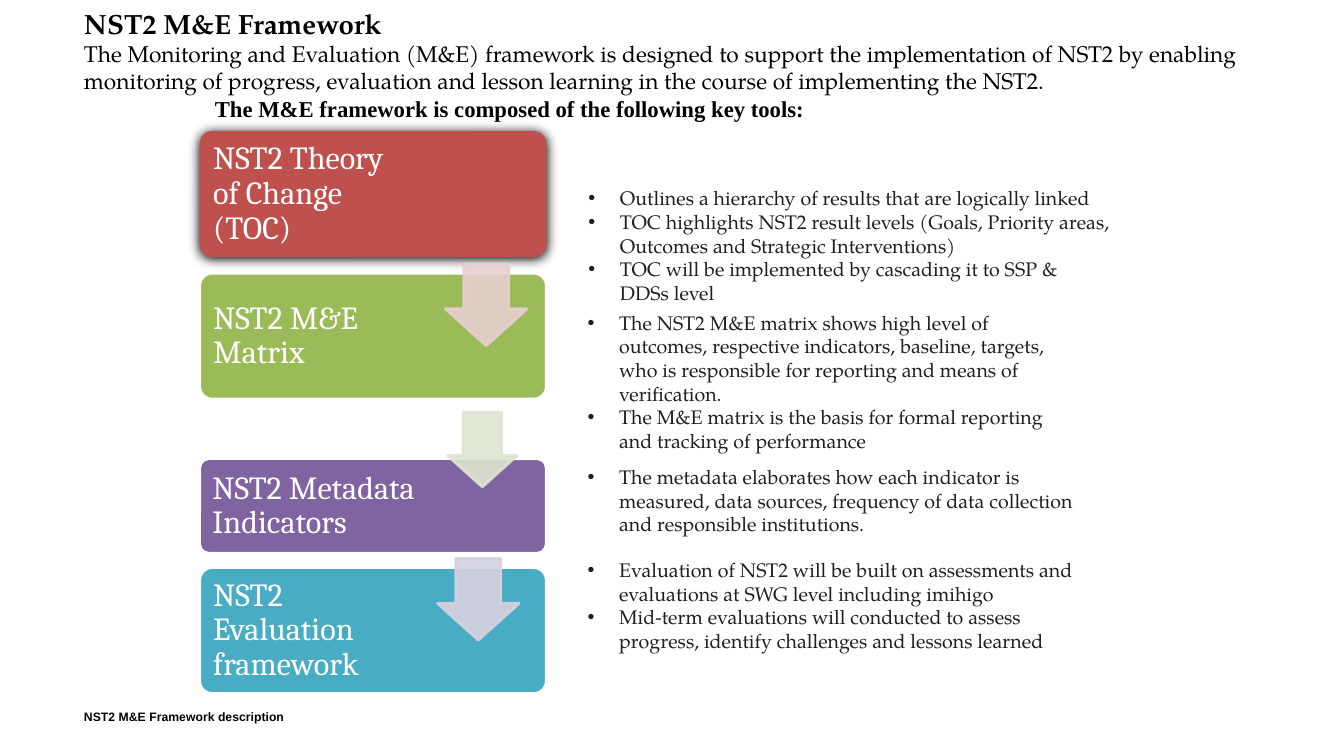
from lxml import etree
from pptx import Presentation
from pptx.dml.color import RGBColor
from pptx.enum.shapes import MSO_SHAPE
from pptx.enum.text import MSO_ANCHOR, PP_ALIGN
from pptx.oxml.ns import qn
from pptx.util import Pt

ROUNDED, DOWN_ARROW = MSO_SHAPE.ROUNDED_RECTANGLE, MSO_SHAPE.DOWN_ARROW
MIDDLE, LEFT = MSO_ANCHOR.MIDDLE, PP_ALIGN.LEFT

COLORS = {
    "black": "000000", "white": "FFFFFF", "body": "1F1F1F",
    "red": "BF504D", "green": "9BBB59", "purple": "8064A2", "teal": "49ACC5",
    "pale_red": "E7CFCF", "pale_green": "DDE5D0", "pale_purple": "D7D1DF",
}
SERIF = "TeX Gyre Pagella"

# text, size, font, bold, left indent
HEADING = [
    ("NST2 M&E Framework", 19.8, SERIF, True, 0),
    ("The Monitoring and Evaluation (M&E) framework is designed to support the "
     "implementation of NST2 by enabling monitoring of progress, evaluation and "
     "lesson learning in the course of implementing the NST2.", 16.2, SERIF, False, 0),
    ("The M&E framework is composed of the following key tools:",
     16.2, "Times New Roman", True, 93.5),
]
FOOTER = "NST2 M&E Framework description"

# text, fill, top, height, right inset
CARDS = [
    ("NST2 Theory of Change (TOC)", "red", 93.6, 90, 107),
    ("NST2 M&E Matrix", "green", 195.1, 90, 87),
    ("NST2 Metadata Indicators", "purple", 327.6, 67.7, 87),
    ("NST2 Evaluation framework", "teal", 405.4, 90, 87),
]
CARD_LEFT, CARD_WIDTH = 142.6, 247.7

# colour, left, top, width, height
ARROWS = [
    ("pale_red", 318.2, 188.6, 58.3, 58.3),
    ("pale_green", 319.7, 294.5, 49.7, 53.3),
    ("pale_purple", 312.5, 398.9, 58.3, 58.3),
]

# left, top, width, height, bullets
DETAILS = [
    (413.3, 129.6, 388, 92, [
        "Outlines a hierarchy of results that are logically linked",
        "TOC highlights NST2 result levels (Goals, Priority areas, Outcomes and "
        "Strategic Interventions)",
        "TOC will be implemented by cascading it to SSP & DDSs level"]),
    (412.6, 218.5, 365.8, 109, [
        "The NST2 M&E matrix shows high level of outcomes, respective indicators, "
        "baseline, targets, who is responsible for reporting and means of verification.",
        "The M&E matrix is the basis for formal reporting and tracking of performance"]),
    (412.6, 328.6, 365.8, 58, [
        "The metadata elaborates how each indicator is measured, data sources, "
        "frequency of data collection and responsible institutions."]),
    (412.6, 395.3, 365.8, 75, [
        "Evaluation of NST2 will be built on assessments and evaluations at SWG "
        "level including imihigo",
        "Mid-term evaluations will conducted to assess progress, identify "
        "challenges and lessons learned"]),
]
BULLET_INDENT = 22.5


def rgb(name):
    return RGBColor.from_string(COLORS[name])


def style(p, size, font, color, bold=False):
    for r in p.runs:
        r.font.size, r.font.name, r.font.bold = Pt(size), font, bold
        r.font.color.rgb = rgb(color)


def add_text(s, left, top, width, height):
    tf = s.shapes.add_textbox(Pt(left), Pt(top), Pt(width), Pt(height)).text_frame
    tf.word_wrap = True
    return tf


def add_paragraphs(tf, texts):
    """Write one paragraph per text and return the paragraphs."""
    tf.text = "\n".join(texts)
    return tf.paragraphs


def add_shape(s, kind, left, top, width, height, fill, line):
    sp = s.shapes.add_shape(kind, Pt(left), Pt(top), Pt(width), Pt(height))
    sp.shadow.inherit = False
    sp.fill.solid()
    sp.fill.fore_color.rgb = rgb(fill)
    sp.line.color.rgb = rgb(line)
    sp.line.width = Pt(2)
    return sp


def set_indent(p, left, first=0):
    pPr = p._p.get_or_add_pPr()
    pPr.set("marL", str(Pt(left)))
    pPr.set("indent", str(Pt(first)))
    return pPr


def add_bullet(p):
    pPr = set_indent(p, BULLET_INDENT, -BULLET_INDENT)
    color = etree.SubElement(pPr, qn("a:buClr"))
    etree.SubElement(color, qn("a:srgbClr"), val=COLORS["body"])
    etree.SubElement(pPr, qn("a:buFont"), typeface="Arial")
    etree.SubElement(pPr, qn("a:buChar"), char="•")


def add_glow_shadow(sp):
    effects = sp._element.spPr.find(qn("a:effectLst"))
    shadow = etree.SubElement(effects, qn("a:outerShdw"), blurRad=str(Pt(8.5)),
                              dist=str(Pt(1)), dir="5400000", rotWithShape="0")
    etree.SubElement(shadow, qn("a:srgbClr"), val=COLORS["black"])


def add_card(s, text, fill, top, height, right_inset):
    sp = add_shape(s, ROUNDED, CARD_LEFT, top, CARD_WIDTH, height, fill, "white")
    sp.adjustments[0] = 0.1
    tf = sp.text_frame
    tf.word_wrap, tf.vertical_anchor = True, MIDDLE
    tf.margin_left, tf.margin_right = Pt(7.2), Pt(right_inset)
    tf.text = text
    p = tf.paragraphs[0]
    p.alignment, p.line_spacing = LEFT, 0.9
    style(p, 23, "Cambria", "white")
    return sp


def add_arrow(s, color, left, top, width, height):
    sp = add_shape(s, DOWN_ARROW, left, top, width, height, color, color)
    sp.adjustments[0], sp.adjustments[1] = 0.55, 0.45
    for clr in sp._element.spPr.iter(qn("a:srgbClr")):
        etree.SubElement(clr, qn("a:alpha"), val="90000")


def main():
    prs = Presentation()
    prs.slide_width, prs.slide_height = Pt(960), Pt(540)
    s = prs.slides.add_slide(prs.slide_layouts[6])

    tf = add_text(s, 52.9, 1.2, 887, 90)
    paragraphs = add_paragraphs(tf, [row[0] for row in HEADING])
    for p, (_, size, font, bold, indent) in zip(paragraphs, HEADING):
        set_indent(p, indent)
        style(p, size, font, "black", bold)

    cards = [add_card(s, *card) for card in CARDS]
    cards[0].line.fill.background()
    add_glow_shadow(cards[0])
    for arrow in ARROWS:
        add_arrow(s, *arrow)

    for left, top, width, height, bullets in DETAILS:
        tf = add_text(s, left, top, width, height)
        for p in add_paragraphs(tf, bullets):
            add_bullet(p)
            style(p, 14, SERIF, "body")

    tf = add_text(s, 52.9, 503.3, 754.6, 28)
    tf.text = FOOTER
    style(tf.paragraphs[0], 8.7, "Arial", "black", True)

    prs.save("out.pptx")


if __name__ == "__main__":
    main()
